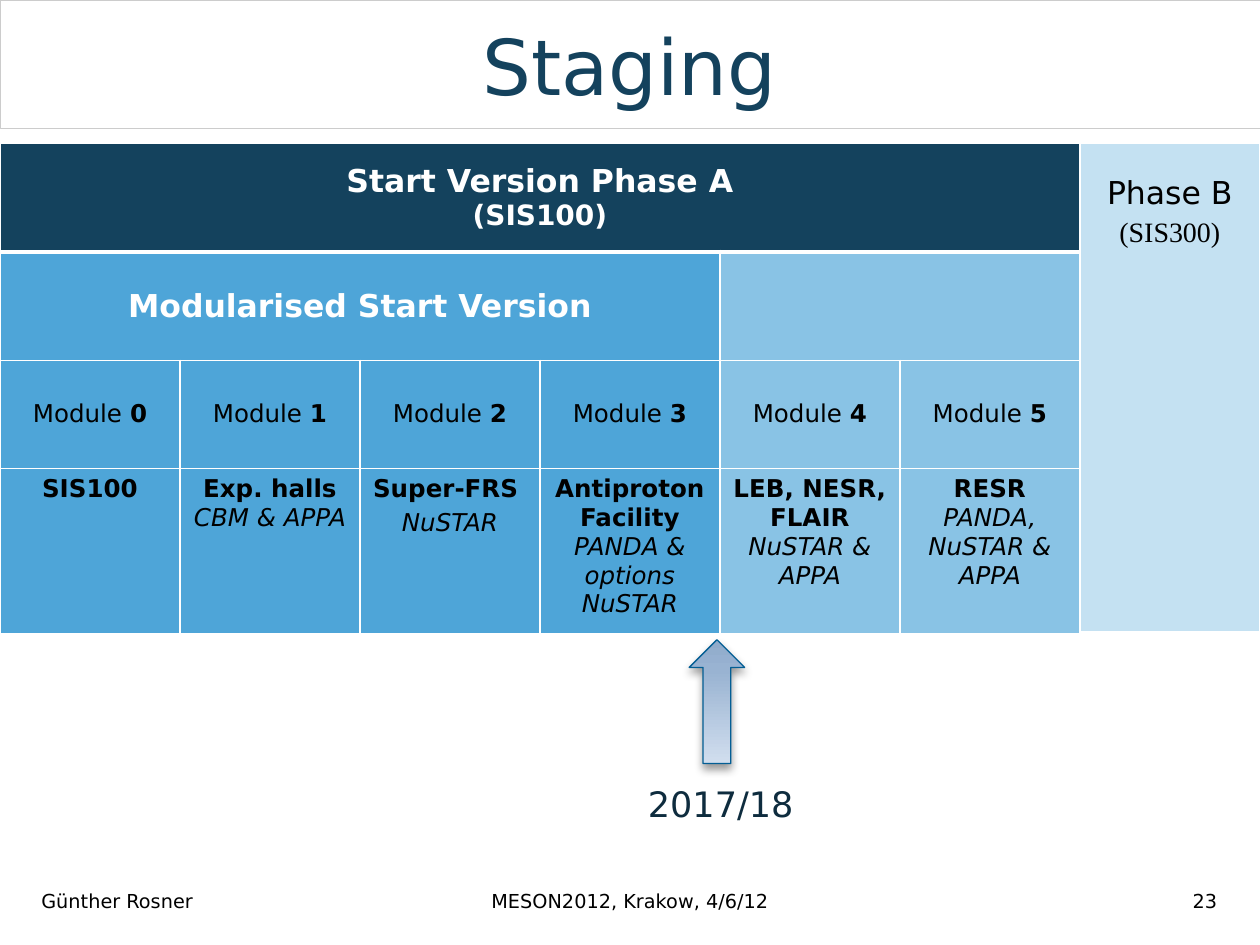
from dataclasses import dataclass
from typing import NamedTuple

from lxml.etree import SubElement
from pptx import Presentation
from pptx.dml.color import RGBColor
from pptx.enum.shapes import MSO_SHAPE
from pptx.enum.text import MSO_ANCHOR, MSO_AUTO_SIZE, PP_ALIGN
from pptx.oxml.ns import qn
from pptx.util import Inches, Pt

WIDTH, HEIGHT = Inches(10), Inches(7.5)
SANS, SERIF = "DejaVu Sans", "Times New Roman"
WHITE, BLACK = "FFFFFF", "000000"
NAVY, BLUE, SKY, PALE = "14425D", "4EA5D8", "89C3E5", "C4E1F2"
COLUMNS = 7
ROWS = (0.86, 0.86, 0.86, 1.31)
TOP, MIDDLE = MSO_ANCHOR.TOP, MSO_ANCHOR.MIDDLE


class Box(NamedTuple):
    x: float
    y: float
    w: float
    h: float

    def emu(self) -> tuple[int, ...]:
        return tuple(round(share * side) for share, side
                     in zip(self, (WIDTH, HEIGHT, WIDTH, HEIGHT)))


class Span(NamedTuple):
    text: str
    size: float = 14
    bold: bool = False
    italic: bool = False
    color: str = BLACK
    font: str = SANS
    broken: bool = False


@dataclass
class Block:
    row: int
    col: int
    fill: str
    paragraphs: list[list[Span]]
    rows: int = 1
    cols: int = 1
    anchor: MSO_ANCHOR = TOP
    bottom: float = 1


@dataclass
class Label:
    box: Box
    span: Span
    align: PP_ALIGN = PP_ALIGN.CENTER
    anchor: MSO_ANCHOR = MIDDLE
    wrap: bool = True


def rgb(value: str) -> RGBColor:
    return RGBColor.from_string(value)


def write(tf, paragraphs: list[list[Span]], align=PP_ALIGN.CENTER) -> None:
    for i, spans in enumerate(paragraphs):
        p = tf.add_paragraph() if i else tf.paragraphs[0]
        p.alignment = align
        if i:
            p.space_before = Pt(spans[0].size * 0.2)
        for span in spans:
            if span.text:
                r = p.add_run()
                r.text = span.text
                r.font.size, r.font.name = Pt(span.size), span.font
                r.font.bold, r.font.italic = span.bold, span.italic
                r.font.color.rgb = rgb(span.color)
            if span.broken:
                p.add_line_break()
                SubElement(p._p[-1], qn("a:rPr"), sz=str(round(span.size * 100)))


def add_label(shapes, label: Label):
    sp = shapes.add_textbox(*label.box.emu())
    tf = sp.text_frame
    tf.word_wrap, tf.vertical_anchor = label.wrap, label.anchor
    if not label.wrap:
        tf.auto_size = MSO_AUTO_SIZE.SHAPE_TO_FIT_TEXT
    write(tf, [[label.span]], label.align)
    return sp


def add_borders(cell, bottom: float) -> None:
    tcPr = cell._tc.get_or_add_tcPr()
    sides = (("a:lnL", 1), ("a:lnR", 1), ("a:lnT", 1), ("a:lnB", bottom))
    for i, (tag, width) in enumerate(sides):
        ln = SubElement(tcPr, qn(tag), w=str(Pt(width)))
        SubElement(SubElement(ln, qn("a:solidFill")), qn("a:srgbClr"), val=WHITE)
        tcPr.insert(i, ln)


def add_block(table, block: Block) -> None:
    first = table.cell(block.row, block.col)
    last_row, last_col = block.row + block.rows, block.col + block.cols
    if block.rows * block.cols > 1:
        first.merge(table.cell(last_row - 1, last_col - 1))
    for row in range(block.row, last_row):
        for col in range(block.col, last_col):
            cell = table.cell(row, col)
            cell.fill.solid()
            cell.fill.fore_color.rgb = rgb(block.fill)
            add_borders(cell, block.bottom)
    first.vertical_anchor = block.anchor
    write(first.text_frame, block.paragraphs)


def add_arrow(shapes, box: Box) -> None:
    sp = shapes.add_shape(MSO_SHAPE.DOWN_ARROW, *box.emu())
    sp.rotation = 180
    sp.shadow.inherit = False
    sp.fill.gradient()
    sp.fill.gradient_angle = 90
    sp.line.color.rgb, sp.line.width = rgb("035E94"), Pt(0.75)
    spPr = sp._element.spPr
    stops = spPr.find(".//" + qn("a:gsLst"))
    stops.clear()
    for pos, color in ((0, "90ABCB"), (25, "99B3D2"), (100, "D1DEEE")):
        gs = SubElement(stops, qn("a:gs"), pos=str(pos * 1000))
        SubElement(gs, qn("a:srgbClr"), val=color)
    shadow = SubElement(spPr.find(qn("a:effectLst")), qn("a:outerShdw"),
                        blurRad=str(Pt(5.2)), dist=str(Pt(3)),
                        dir="5400000", rotWithShape="0")
    SubElement(SubElement(shadow, qn("a:srgbClr"), val=BLACK),
               qn("a:alpha"), val="40000")


def head(text: str, broken: bool = False) -> Span:
    return Span(text, bold=True, broken=broken)


def users(text: str) -> Span:
    return Span(text, italic=True)


MODULES = [
    [[head("SIS100")]],
    [[head("Exp. halls "), users("CBM & APPA")]],
    [[head("Super-FRS ")], [users("NuSTAR")]],
    [[head("Antiproton Facility", True), users("PANDA & options NuSTAR")]],
    [[head("LEB, NESR, FLAIR", True), users("NuSTAR & APPA")]],
    [[head("RESR", True), users("PANDA, NuSTAR & APPA")]],
]
PHASES = [
    Block(0, 0, NAVY, [[Span("Start Version Phase A", 18, True, color=WHITE, broken=True),
                        Span("(SIS100)", 16, True, color=WHITE)]],
          cols=6, anchor=MIDDLE, bottom=3),
    Block(0, 6, PALE, [[Span("", 12, broken=True), Span("Phase B", 18)],
                       [Span("(SIS300)", 16, font=SERIF)]], rows=4, bottom=3),
    Block(1, 0, BLUE, [[Span("Modularised Start Version", 18, True, color=WHITE)]],
          cols=4, anchor=MIDDLE),
    Block(1, 4, SKY, [], cols=2),
]
FOOTERS = [
    Label(Box(0.023, 0.927, 0.233, 0.053), Span("Günther Rosner", 11), PP_ALIGN.LEFT),
    Label(Box(0.313, 0.927, 0.374, 0.053), Span("MESON2012, Krakow, 4/6/12", 11)),
    Label(Box(0.743, 0.927, 0.233, 0.053), Span("23", 11), PP_ALIGN.RIGHT),
]


def main() -> None:
    prs = Presentation()
    prs.slide_width, prs.slide_height = WIDTH, HEIGHT
    s = prs.slides.add_slide(prs.slide_layouts[6])

    title = add_label(s.shapes, Label(Box(0, 0, 1, 0.136), Span("Staging", 44, color=NAVY)))
    title.line.color.rgb, title.line.width = rgb("CCCCCC"), Pt(0.25)
    for footer in FOOTERS:
        add_label(s.shapes, footer)

    frame = s.shapes.add_table(len(ROWS), COLUMNS, *Box(0, 0.152, 1, 0.519).emu())
    table = frame.table
    table.first_row = table.horz_banding = False
    for row, height in zip(table.rows, ROWS):
        row.height = Inches(height)
    for phase in PHASES:
        add_block(table, phase)
    for i, content in enumerate(MODULES):
        fill = BLUE if i < 4 else SKY
        name = [[Span("Module "), head(str(i))]]
        add_block(table, Block(2, i, fill, name, anchor=MIDDLE))
        add_block(table, Block(3, i, fill, content))

    milestone = s.shapes.add_group_shape().shapes
    add_arrow(milestone, Box(0.547, 0.677, 0.044, 0.131))
    add_label(milestone, Label(Box(0.502, 0.821, 0.14, 0.059),
                               Span("2017/18", 20, color="0E2C3E"), anchor=TOP, wrap=False))
    prs.save("out.pptx")


if __name__ == "__main__":
    main()
